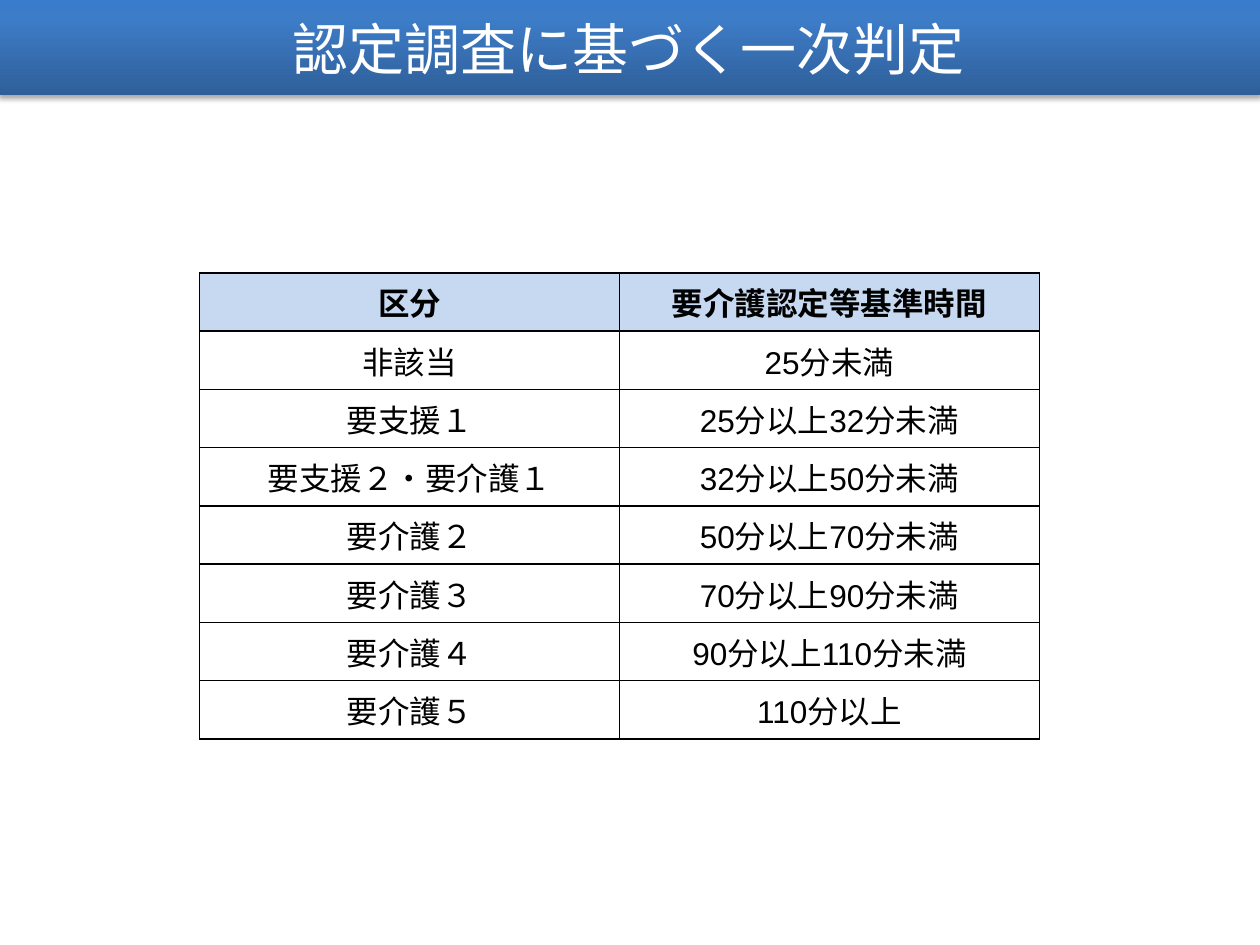
from pptx import Presentation
from pptx.dml.color import RGBColor
from pptx.enum.shapes import MSO_SHAPE
from pptx.enum.text import MSO_ANCHOR, PP_ALIGN
from pptx.oxml import parse_xml
from pptx.oxml.ns import nsdecls
from pptx.util import Pt

RECTANGLE = MSO_SHAPE.RECTANGLE
MIDDLE = MSO_ANCHOR.MIDDLE
CENTER = PP_ALIGN.CENTER

WHITE = RGBColor(0xFF, 0xFF, 0xFF)
BLACK = RGBColor(0x00, 0x00, 0x00)
HEADER_BLUE = RGBColor(0xC6, 0xD9, 0xF1)
BANNER_STOPS = [
    (0, RGBColor(0x2F, 0x5F, 0x99)),
    (80, RGBColor(0x3D, 0x7C, 0xC7)),
    (100, RGBColor(0x3A, 0x7C, 0xCB)),
]

ROWS = [
    ("区分", "要介護認定等基準時間"),
    ("非該当", "25分未満"),
    ("要支援１", "25分以上32分未満"),
    ("要支援２・要介護１", "32分以上50分未満"),
    ("要介護２", "50分以上70分未満"),
    ("要介護３", "70分以上90分未満"),
    ("要介護４", "90分以上110分未満"),
    ("要介護５", "110分以上"),
]
COLUMN_WIDTH = 240
ROW_HEIGHT = 31.9


def format_text(para, font_name, size, color, bold=False):
    para.alignment = CENTER
    for span in para.runs:
        span.font.name = font_name
        span.font.size = Pt(size)
        span.font.color.rgb = color
        span.font.bold = bold


def add_borders(cell):
    properties = cell._tc.get_or_add_tcPr()
    for position, side in enumerate(("lnL", "lnR", "lnT", "lnB")):
        border = parse_xml(
            f'<a:{side} {nsdecls("a")} w="{Pt(1)}"><a:solidFill>'
            f'<a:srgbClr val="{BLACK}"/></a:solidFill></a:{side}>'
        )
        properties.insert(position, border)


deck = Presentation()
deck.slide_width, deck.slide_height = Pt(720), Pt(540)
page = deck.slides.add_slide(deck.slide_layouts[6])

# Title banner with a vertical gradient and a soft shadow
banner = page.shapes.add_shape(RECTANGLE, Pt(-1.4), Pt(0), Pt(721.4), Pt(54.5))
banner.line.fill.background()
stops = "".join(
    f'<a:gs pos="{percent * 1000}"><a:srgbClr val="{color}"/></a:gs>'
    for percent, color in BANNER_STOPS
)
gradient = parse_xml(
    f'<a:gradFill {nsdecls("a")} rotWithShape="1"><a:gsLst>{stops}</a:gsLst>'
    '<a:lin ang="16200000" scaled="0"/></a:gradFill>'
)
shadow = parse_xml(
    f'<a:effectLst {nsdecls("a")}><a:outerShdw blurRad="{Pt(3.1)}" '
    f'dist="{Pt(1.8)}" dir="5400000" rotWithShape="0"><a:srgbClr val="{BLACK}">'
    '<a:alpha val="35000"/></a:srgbClr></a:outerShdw></a:effectLst>'
)
banner_properties = banner._element.spPr
banner_properties.prstGeom.addnext(gradient)
banner_properties.append(shadow)

banner.text_frame.text = "認定調査に基づく一次判定"
banner.text_frame.vertical_anchor = MIDDLE
format_text(banner.text_frame.paragraphs[0], "Calibri", 32, WHITE)

# Care levels and their standard times
table = page.shapes.add_table(
    len(ROWS), 2, Pt(114), Pt(156), Pt(2 * COLUMN_WIDTH), Pt(len(ROWS) * ROW_HEIGHT)
).table
table.horz_banding = False
for column in table.columns:
    column.width = Pt(COLUMN_WIDTH)
for row_index, texts in enumerate(ROWS):
    is_header = row_index == 0
    table.rows[row_index].height = Pt(ROW_HEIGHT)
    for column_index, text in enumerate(texts):
        cell = table.cell(row_index, column_index)
        cell.text_frame.text = text
        format_text(cell.text_frame.paragraphs[0], "Arial", 18, BLACK, is_header)
        if is_header:
            cell.fill.solid()
            cell.fill.fore_color.rgb = HEADER_BLUE
        else:
            cell.fill.background()
        add_borders(cell)

deck.save("out.pptx")
